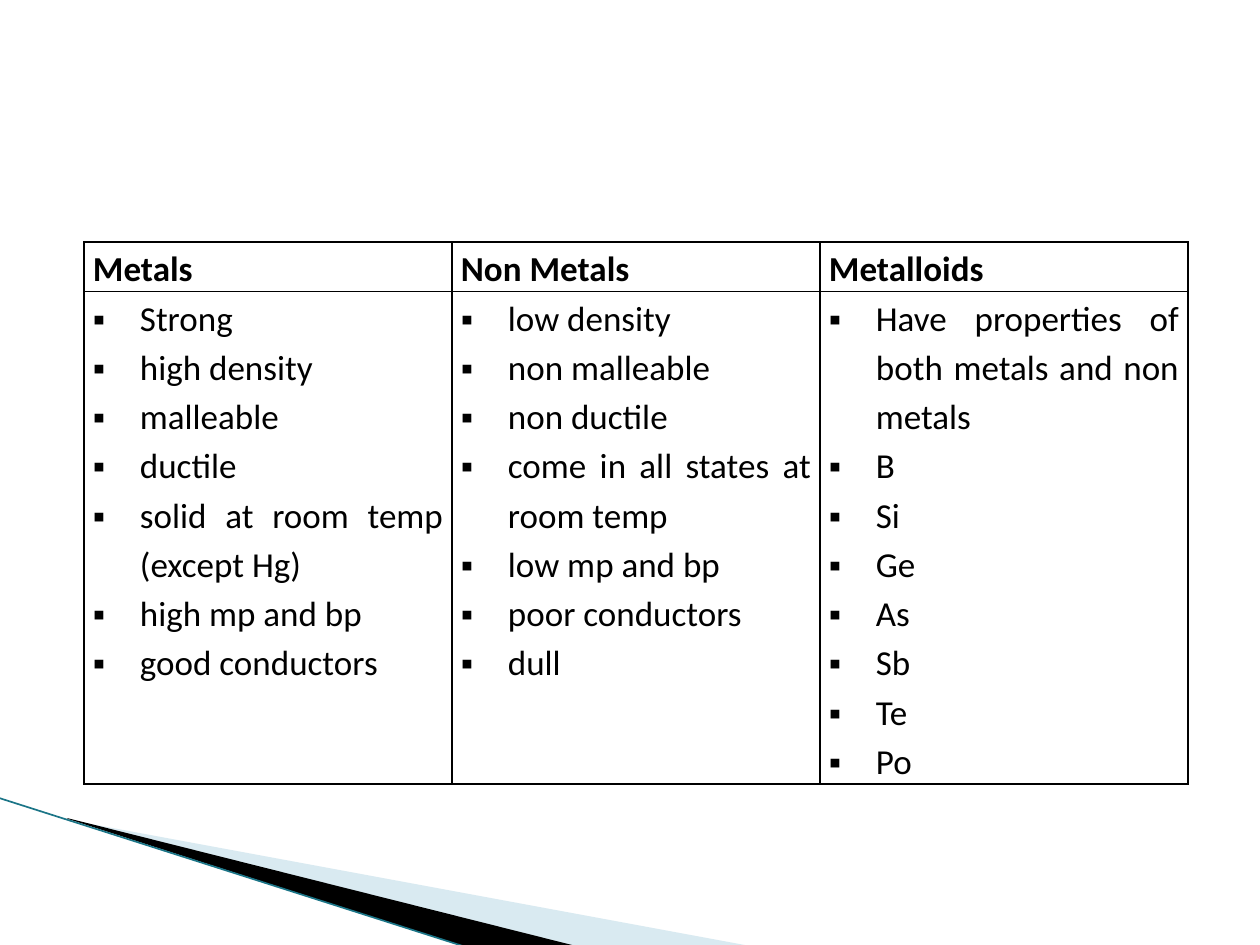
"""Build a slide that compares metals, non metals and metalloids."""
import pptx
import pptx.util
import pptx.dml.color
import pptx.enum.shapes
import pptx.enum.text
import pptx.oxml
import pptx.oxml.ns

HEADS = ["Metals", "Non Metals", "Metalloids"]
LISTS = [
    ["Strong", "high density", "malleable", "ductile",
     "solid at room temp (except Hg)", "high mp and bp", "good conductors"],
    ["low density", "non malleable", "non ductile",
     "come in all states at room temp", "low mp and bp", "poor conductors",
     "dull"],
    ["Have properties of both metals and non metals",
     "B", "Si", "Ge", "As", "Sb", "Te", "Po"],
]
WEDGES = [
    ([(69, 820), (750, 946), (575, 946), (69, 819)], "A0CBDC", 40),
    ([(67, 818), (576, 946), (469, 948), (68, 819)], "000000", 100),
]
EDGE = [(-1, 798), (469, 948)]
LEFT, TOP, COL, ROWS = 84, 242, 368, [49, 492]
INSET, INDENT, TAB = 9, 47, 252
INK = "000000"
SCALE = 914400 // 126


def px(num):
    """Turn px into EMU."""
    return pptx.util.Emu(num * SCALE)


def hue(code):
    """Turn a hex string into a colour."""
    return pptx.dml.color.RGBColor.from_string(code)


def add_xml(node, text):
    """Append an element of the drawing namespace and return it."""
    space = pptx.oxml.ns.nsdecls("a")
    item = pptx.oxml.parse_xml(text.replace("/>", f" {space}/>", 1)
                               if text.endswith("/>") and text.count("<") == 1
                               else text.replace(">", f" {space}>", 1))
    node.append(item)
    return item


def add_wedge(slide, points, code, alpha):
    """Draw one filled wedge."""
    path = slide.shapes.build_freeform(*points[0], scale=SCALE)
    path.add_line_segments(points[1:], close=True)
    wedge = path.convert_to_shape()
    wedge.shadow.inherit = False
    wedge.fill.solid()
    wedge.fill.fore_color.rgb = hue(code)
    wedge.line.fill.background()
    if alpha < 100:
        tint = wedge.fill._xPr.find(".//" + pptx.oxml.ns.qn("a:srgbClr"))
        add_xml(tint, f'<a:alpha val="{alpha * 1000}"/>')


def add_edge(slide):
    """Draw the thin line along the wedges."""
    ends = [px(num) for point in EDGE for num in point]
    kind = pptx.enum.shapes.MSO_CONNECTOR.STRAIGHT
    edge = slide.shapes.add_connector(kind, *ends)
    edge.line.color.rgb = hue("1B7587")
    edge.line.width = pptx.util.Pt(0.95)
    add_xml(edge._element.spPr, "<a:effectLst/>")


def fill_cell(cell, lines, head):
    """Write one cell as a bold heading or a bulleted list."""
    cell.margin_left = cell.margin_right = px(INSET)
    cell.margin_top = cell.margin_bottom = 0
    for side in "LRTB":
        add_xml(cell._tc.tcPr,
                f'<a:ln{side} w="12700"><a:solidFill><a:srgbClr val="{INK}"/>'
                f'</a:solidFill></a:ln{side}>')
    cell.fill.background()
    frame = cell.text_frame
    for num, line in enumerate(lines):
        para = frame.add_paragraph() if num else frame.paragraphs[0]
        para.alignment = pptx.enum.text.PP_ALIGN.JUSTIFY
        para.line_spacing = 1.15
        props = para._p.get_or_add_pPr()
        if not head:
            props.set("marL", str(px(INDENT)))
            props.set("indent", str(-px(INDENT)))
            add_xml(props, '<a:buFont typeface="Arial"/>')
            add_xml(props, '<a:buChar char="▪"/>')
        add_xml(props, f'<a:tabLst><a:tab pos="{px(TAB)}" algn="l"/></a:tabLst>')
        run = para.add_run()
        run.text = line
        run.font.name = "Calibri"
        run.font.size = pptx.util.Pt(20)
        run.font.bold = head
        run.font.color.rgb = hue(INK)


def add_grid(slide):
    """Place the table and fill its cells."""
    size = [px(num) for num in (LEFT, TOP, COL * len(HEADS), sum(ROWS))]
    grid = slide.shapes.add_table(len(ROWS), len(HEADS), *size).table
    grid.horz_banding = False
    grid.first_row = False
    for row, high in zip(grid.rows, ROWS):
        row.height = px(high)
    for num, (head, lines) in enumerate(zip(HEADS, LISTS)):
        grid.columns[num].width = px(COL)
        fill_cell(grid.cell(0, num), [head], True)
        fill_cell(grid.cell(1, num), lines, False)


def main():
    """Build and save the slide."""
    deck = pptx.Presentation()
    deck.slide_width, deck.slide_height = px(1260), px(945)
    slide = deck.slides.add_slide(deck.slide_layouts[6])
    for wedge in WEDGES:
        add_wedge(slide, *wedge)
    add_edge(slide)
    add_grid(slide)
    deck.save("out.pptx")


if __name__ == "__main__":
    main()
